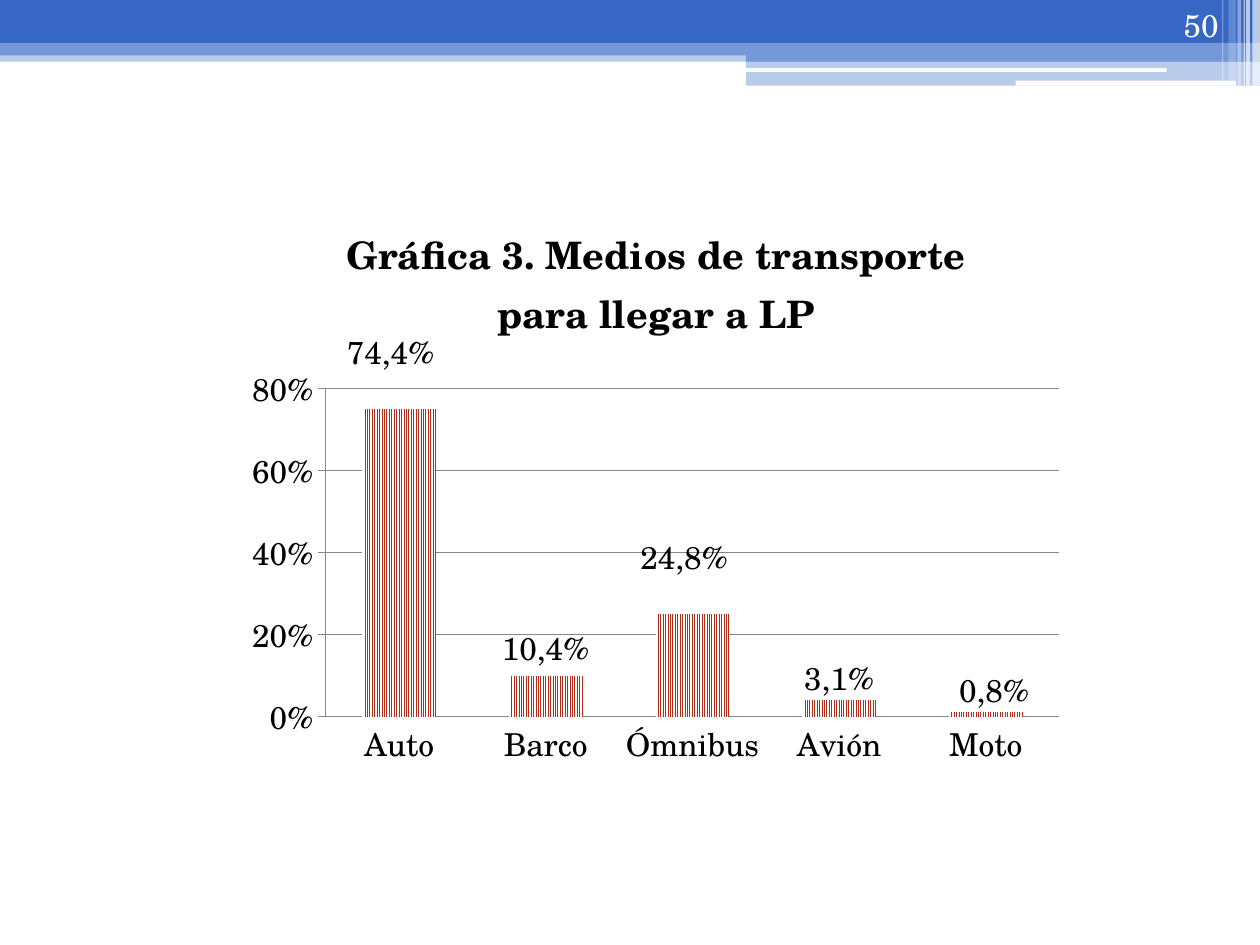
"""Builds a slide with a column chart of means of transport under a banded header."""
from lxml import etree
from pptx import Presentation
from pptx.chart.data import CategoryChartData
from pptx.dml.color import RGBColor
from pptx.enum.chart import XL_CHART_TYPE, XL_LABEL_POSITION, XL_TICK_MARK
from pptx.enum.dml import MSO_PATTERN
from pptx.enum.shapes import MSO_SHAPE
from pptx.enum.text import MSO_ANCHOR, PP_ALIGN
from pptx.oxml.ns import qn
from pptx.util import Inches, Pt

COLORS = {"dark": "3667C4", "mid": "7598D9", "white": "FFFFFF",
          "black": "000000", "bar": "B32C16", "grid": "878787"}
RECT, ROUND = MSO_SHAPE.RECTANGLE, MSO_SHAPE.ROUNDED_RECTANGLE
BANDS = [
    (RECT, 0, 0.4, 10, 0.09, "mid", 50),
    (RECT, 0, 0, 10, 0.34, "dark", 100),
    (RECT, 0, 0.34, 10, 0.1, "mid", 100),
    (RECT, 5.92, 0.39, 4.08, 0.1, "mid", 100),
    (RECT, 5.92, 0.48, 4.08, 0.2, "mid", 50),
    (ROUND, 5.91, 0.54, 3.35, 0.03, "white", 100),
    (ROUND, 8.06, 0.64, 1.75, 0.04, "white", 100),
]
STRIPES = [(9.94, 0.06, 0.68, 65), (9.89, 0.03, 0.68, 65), (9.87, 0.01, 0.68, 60),
           (9.82, 0.03, 0.68, 40), (9.75, 0.06, 0.64, 20), (9.7, 0.01, 0.64, 30)]
TRANSPORT = [
    ("Auto", 0.75, "74,4%", -0.01, -0.05),
    ("Barco", 0.1, "10,4%", 0, 0),
    ("Ómnibus", 0.25, "24,8%", -0.01, -0.05),
    ("Avión", 0.04, "3,1%", 0, 0.01),
    ("Moto", 0.01, "0,8%", 0.01, 0.01),
]


class SlideBuilder:
    """Holds the style and the current slide."""

    def __init__(self, s, font="TeX Gyre Schola", size=18):
        self.s, self.font, self.size = s, font, size

    def color(self, name):
        return RGBColor.from_string(COLORS[name])

    def style(self, font, color="black", size=None, bold=False):
        font.name, font.size, font.bold = self.font, Pt(size or self.size), bold
        font.color.rgb = self.color(color)

    def band(self, kind, x, y, w, h, color, opacity):
        sp = self.s.shapes.add_shape(kind, Inches(x), Inches(y), Inches(w), Inches(h))
        sp.shadow.inherit = False
        sp.line.fill.background()
        sp.fill.solid()
        sp.fill.fore_color.rgb = self.color(color)
        if opacity < 100:
            clr = sp.fill._xPr.find(".//" + qn("a:srgbClr"))
            etree.SubElement(clr, qn("a:alpha"), val=str(opacity * 1000))

    def text(self, x, y, w, h, text):
        tf = self.s.shapes.add_textbox(Inches(x), Inches(y), Inches(w), Inches(h)).text_frame
        tf.word_wrap = True
        tf.vertical_anchor = MSO_ANCHOR.BOTTOM
        tf.text = text
        p = tf.paragraphs[0]
        p.alignment = PP_ALIGN.RIGHT
        self.style(p.runs[0].font, "white")

    def layout(self, parent, index, **values):
        for old in parent.findall(qn("c:layout")):
            parent.remove(old)
        layout = etree.Element(qn("c:layout"))
        manual = etree.SubElement(layout, qn("c:manualLayout"))
        for name, value in values.items():
            etree.SubElement(manual, qn("c:" + name), val=str(value))
        parent.insert(index, layout)

    def title(self, chart, lines):
        tf = chart.chart_title.text_frame
        tf.text = "\n".join(lines)
        for p in tf.paragraphs:
            p.alignment = PP_ALIGN.CENTER
            self.style(p.runs[0].font, size=21.6, bold=True)
        self.layout(chart.chart_title._element, 1, xMode="edge", yMode="edge", x=0.13, y=0.04)

    def axes(self, chart):
        cat, val = chart.category_axis, chart.value_axis
        cat.major_tick_mark = XL_TICK_MARK.NONE
        val.major_tick_mark = XL_TICK_MARK.OUTSIDE
        val.minimum_scale, val.maximum_scale, val.major_unit = 0, 0.8, 0.2
        val.has_major_gridlines = True
        val.tick_labels.number_format = "0%"
        val.tick_labels.number_format_is_linked = False
        for line in (cat.format.line, val.format.line, val.major_gridlines.format.line):
            line.color.rgb = self.color("grid")
            line.width = Pt(0.75)

    def labels(self, series):
        for i, (_, _, text, dx, dy) in enumerate(TRANSPORT):
            label = series.points[i].data_label
            label.text_frame.text = text
            self.style(label.text_frame.paragraphs[0].runs[0].font)
            label.position = XL_LABEL_POSITION.OUTSIDE_END
            if dx or dy:
                dlbl = series._element.findall(".//" + qn("c:dLbl"))[i]
                self.layout(dlbl, 1, x=dx, y=dy)
        for leader in series._element.iter(qn("c:showLeaderLines")):
            leader.set("val", "0")

    def chart(self, x, y, w, h, title):
        data = CategoryChartData(number_format="0.00%")
        data.categories = [row[0] for row in TRANSPORT]
        data.add_series("Series 1", [row[1] for row in TRANSPORT])
        chart = self.s.shapes.add_chart(XL_CHART_TYPE.COLUMN_CLUSTERED, Inches(x), Inches(y),
                                        Inches(w), Inches(h), data).chart
        self.style(chart.font)
        chart.has_legend = False
        self.title(chart, title)
        self.axes(chart)
        plot = chart.plots[0]
        plot.gap_width, plot.vary_by_categories = 100, False
        series = plot.series[0]
        fill = series.format.fill
        fill.patterned()
        fill.pattern = MSO_PATTERN.NARROW_VERTICAL
        fill.fore_color.rgb = self.color("bar")
        fill.back_color.rgb = self.color("white")
        self.labels(series)
        area = chart._chartSpace.find(".//" + qn("c:plotArea"))
        self.layout(area, 0, layoutTarget="inner", xMode="edge", yMode="edge",
                    x=0.11, y=0.33, w=0.87, h=0.56)


def main():
    prs = Presentation()
    prs.slide_width, prs.slide_height = Inches(10), Inches(7.5)
    builder = SlideBuilder(prs.slides.add_slide(prs.slide_layouts[6]))
    for band in BANDS:
        builder.band(*band)
    for x, w, h, opacity in STRIPES:
        builder.band(RECT, x, 0, w, h, "white", opacity)
    builder.text(8.94, 0, 0.83, 0.4, "50")
    builder.chart(1.85, 1.55, 6.69, 4.65,
                  ["Gráfica 3. Medios de transporte", "para llegar a LP"])
    prs.save("out.pptx")


if __name__ == "__main__":
    main()
